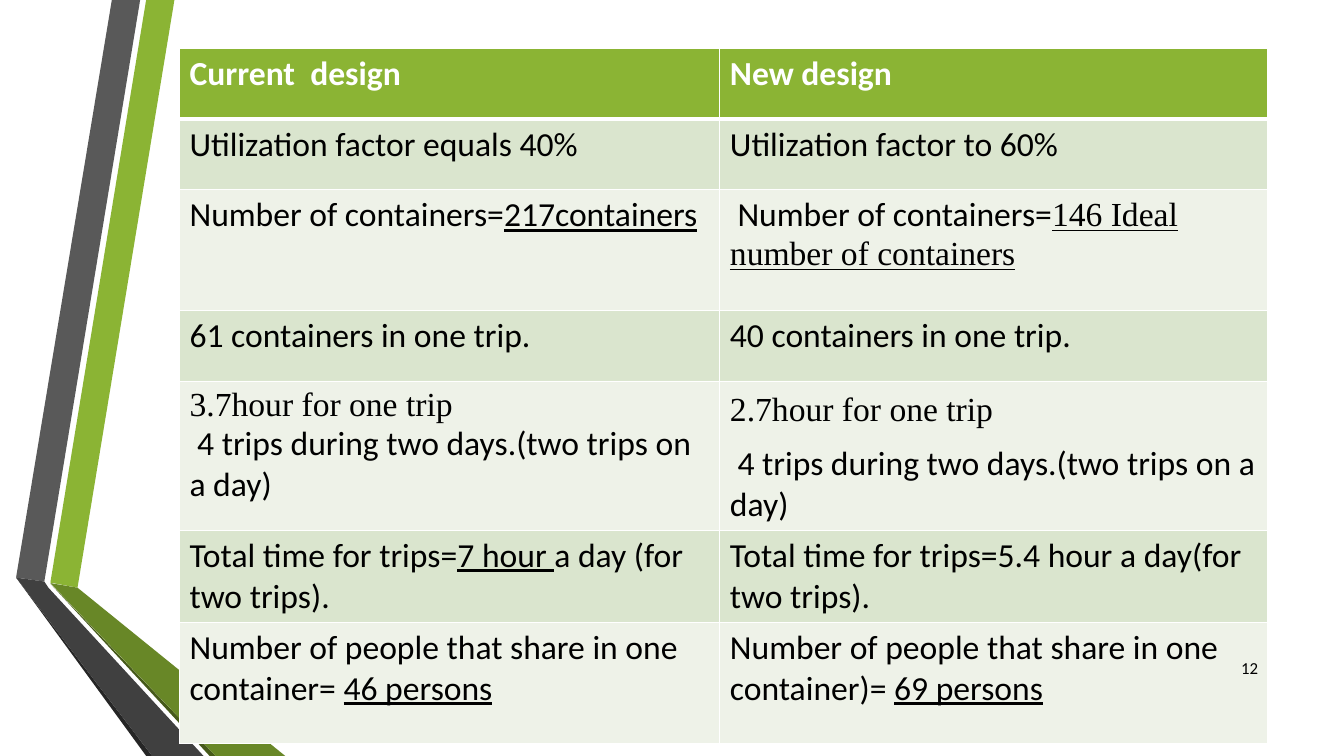
from dataclasses import dataclass

from lxml import etree
from pptx import Presentation
from pptx.dml.color import RGBColor
from pptx.enum.text import MSO_ANCHOR, PP_ALIGN
from pptx.oxml.ns import qn
from pptx.slide import Slide
from pptx.table import _Cell
from pptx.text.text import _Paragraph
from pptx.util import Pt

MIDDLE = MSO_ANCHOR.MIDDLE
RIGHT = PP_ALIGN.RIGHT
SANS = "Calibri"
SERIF = "Times New Roman"
BLANK_LAYOUT = 6

COLORS = {
    "white": "FFFFFF",
    "black": "000000",
    "green": "8BB434",
    "green_shade": "688727",
    "green_edge": "465A1A",
    "gray": "595959",
    "gray_shade": "404040",
    "gray_edge": "262626",
    "band_dark": "DAE5CE",
    "band_light": "EEF2E8",
}


@dataclass(frozen=True)
class Span:
    text: str
    font: str = SANS
    underline: bool = False


@dataclass(frozen=True)
class Line:
    spans: tuple[Span, ...]
    spacing: float | None = None
    after: float | None = None


@dataclass(frozen=True)
class Row:
    height: float
    current: tuple[Line, ...]
    new: tuple[Line, ...]


@dataclass(frozen=True)
class Ribbon:
    color: str
    points: tuple[tuple[float, float], ...]


def line(*spans: Span | str, spacing: float | None = None,
         after: float | None = None) -> Line:
    """Make a paragraph; plain strings become spans in the default format."""
    full = tuple(Span(span) if isinstance(span, str) else span for span in spans)
    return Line(full, spacing, after)


RIBBONS = (
    Ribbon("green", ((36, 416.2), (55.4, 419.8), (124.6, 0), (104.4, 0))),
    Ribbon("gray", ((100.1, 0), (79.9, 0), (11.5, 412.6), (31.7, 415.4))),
    Ribbon("gray_edge", ((11.5, 412.6), (104.4, 540), (108.7, 540))),
    Ribbon("green_edge", ((36, 416.9), (149.8, 540), (154.1, 540))),
    Ribbon("green_shade", ((36, 416.5), (154.1, 540), (203.8, 540), (55.4, 419.8))),
    Ribbon("gray_shade", ((145.4, 540), (34.6, 419.8), (31.7, 415.4),
                          (11.5, 412.6), (108.7, 540))),
)

TABLE_LEFT, TABLE_TOP = 128.2, 34.8
COLUMN_WIDTHS = (386, 391)
SHORT, MEDIUM, TALL = 50.4, 79.9, 86.4
TWO_DAYS = line(" 4 trips during two days.(two trips on a day)")

ROWS = (
    Row(SHORT, (line("Current  design"),), (line("New design"),)),
    Row(SHORT, (line("Utilization factor equals 40%"),),
        (line("Utilization factor to 60%"),)),
    Row(TALL,
        (line("Number of containers=", Span("217containers", underline=True)),),
        (line(" Number of containers=",
              Span("146 Ideal number of containers", SERIF, True)),)),
    Row(SHORT, (line("61 containers in one trip."),),
        (line("40 containers in one trip."),)),
    Row(MEDIUM,
        (line(Span("3.7hour for one trip", SERIF)), TWO_DAYS),
        (line(Span("2.7hour for one trip", SERIF), spacing=1.15, after=10), TWO_DAYS)),
    Row(SHORT,
        (line("Total time for trips=", Span("7 hour ", underline=True),
              "a day (for two trips)."),),
        (line("Total time for trips=5.4 hour a day(for two trips)."),)),
    Row(TALL,
        (line("Number of people that share in one container= ",
              Span("46 persons", underline=True)),),
        (line("Number of people that share in one container)= ",
              Span("69 persons", underline=True)),)),
)


def rgb(name: str) -> RGBColor:
    return RGBColor.from_string(COLORS[name])


def add_text(para: _Paragraph, text: str, *, size: float, color: str,
             font: str = SANS, bold: bool = False, underline: bool = False) -> None:
    run = para.add_run()
    run.text = text
    run.font.name = font
    run.font.size = Pt(size)
    run.font.bold = bold
    run.font.underline = underline
    run.font.color.rgb = rgb(color)


def draw_ribbon(page: Slide, ribbon: Ribbon) -> None:
    start, *rest = [(Pt(x), Pt(y)) for x, y in ribbon.points]
    builder = page.shapes.build_freeform(*start)
    builder.add_line_segments(rest, close=True)
    shape = builder.convert_to_shape()
    shape.shadow.inherit = False
    shape.fill.solid()
    shape.fill.fore_color.rgb = rgb(ribbon.color)
    shape.line.fill.background()


def set_borders(cell: _Cell, top: float, bottom: float) -> None:
    """Give the cell white borders, which must precede its fill in the XML."""
    properties = cell._tc.get_or_add_tcPr()
    widths = {"a:lnL": 1, "a:lnR": 1, "a:lnT": top, "a:lnB": bottom}
    for index, (tag, width) in enumerate(widths.items()):
        border = etree.Element(qn(tag), w=str(Pt(width)))
        fill = etree.SubElement(border, qn("a:solidFill"))
        etree.SubElement(fill, qn("a:srgbClr"), val=COLORS["white"])
        properties.insert(index, border)


def fill_cell(cell: _Cell, lines: tuple[Line, ...], row_index: int) -> None:
    header = row_index == 0
    band = "band_dark" if row_index % 2 else "band_light"
    cell.fill.solid()
    cell.fill.fore_color.rgb = rgb("green" if header else band)
    set_borders(cell, top=3 if row_index == 1 else 1, bottom=3 if header else 1)
    frame = cell.text_frame
    for index, content in enumerate(lines):
        para = frame.add_paragraph() if index else frame.paragraphs[0]
        if content.spacing is not None:
            para.line_spacing = content.spacing
        if content.after is not None:
            para.space_after = Pt(content.after)
        for span in content.spans:
            add_text(para, span.text, size=24, font=span.font, bold=header,
                     color="white" if header else "black", underline=span.underline)


def draw_comparison(page: Slide) -> None:
    height = sum(row.height for row in ROWS)
    table = page.shapes.add_table(
        len(ROWS), len(COLUMN_WIDTHS), Pt(TABLE_LEFT), Pt(TABLE_TOP),
        Pt(sum(COLUMN_WIDTHS)), Pt(height)).table
    for column, width in zip(table.columns, COLUMN_WIDTHS):
        column.width = Pt(width)
    for row_index, row in enumerate(ROWS):
        table.rows[row_index].height = Pt(row.height)
        for column_index, lines in enumerate((row.current, row.new)):
            fill_cell(table.cell(row_index, column_index), lines, row_index)


def draw_page_number(page: Slide, number: str) -> None:
    box = page.shapes.add_textbox(Pt(862.6), Pt(462.4), Pt(43.2), Pt(28.8))
    frame = box.text_frame
    frame.word_wrap = True
    frame.vertical_anchor = MIDDLE
    para = frame.paragraphs[0]
    para.alignment = RIGHT
    add_text(para, number, size=12, color="black")


def main() -> None:
    deck = Presentation()
    deck.slide_width, deck.slide_height = Pt(960), Pt(540)
    page = deck.slides.add_slide(deck.slide_layouts[BLANK_LAYOUT])
    for ribbon in RIBBONS:
        draw_ribbon(page, ribbon)
    draw_comparison(page)
    draw_page_number(page, "12")
    deck.save("out.pptx")


if __name__ == "__main__":
    main()
